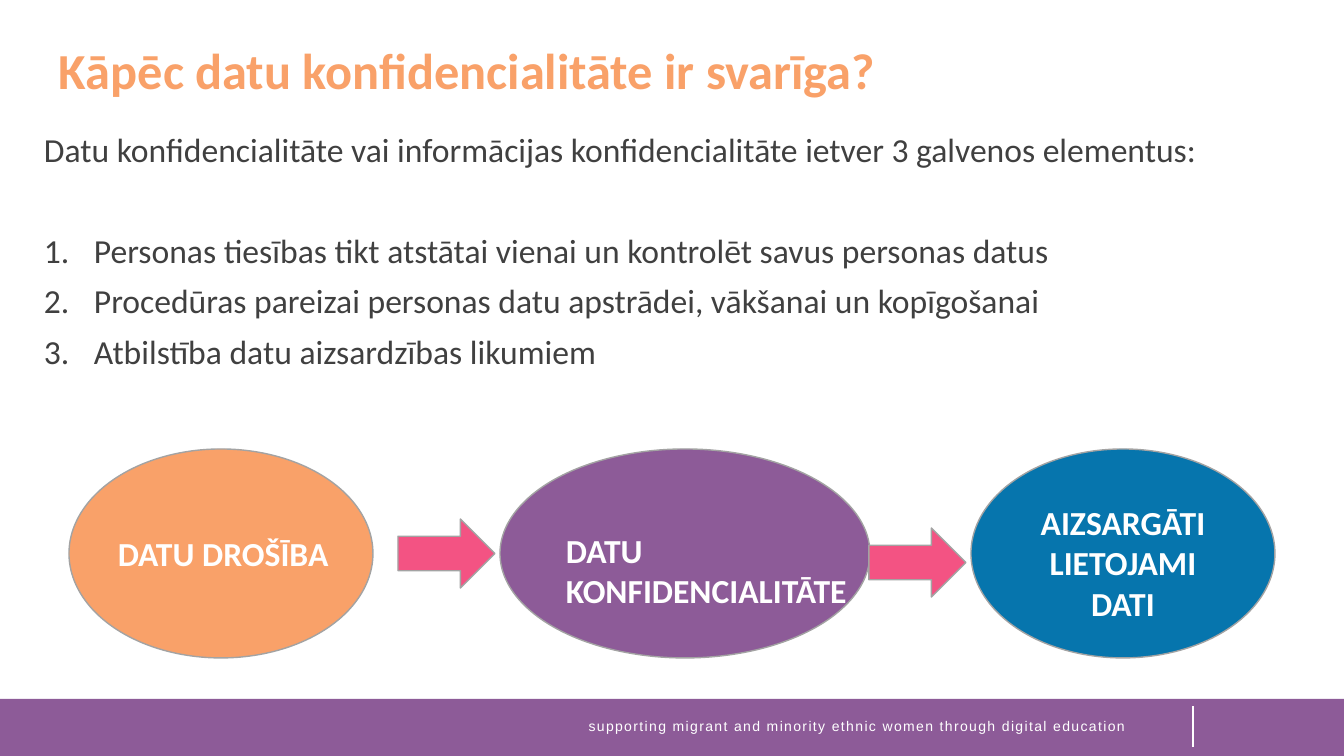
from lxml import etree
from pptx import Presentation
from pptx import util as u
from pptx.dml.color import RGBColor
from pptx.enum import shapes, text
from pptx.oxml.ns import qn

EMU_PER_PX = 914400 / 100.8
ORANGE, PURPLE, BLUE, PINK = "F9A169", "8D5B98", "0675AD", "F35383"
WHITE, DARK, OUTLINE = "FFFFFF", "404040", "A3A3A3"
LEFT, CENTER = text.PP_ALIGN.LEFT, text.PP_ALIGN.CENTER
OVAL, ARROW = shapes.MSO_SHAPE.OVAL, shapes.MSO_SHAPE.RIGHT_ARROW

INTRO = "Datu konfidencialitāte vai informācijas konfidencialitāte ietver 3 galvenos elementus:"
ELEMENTS = [
    "Personas tiesības tikt atstātai vienai un kontrolēt savus personas datus",
    "Procedūras pareizai personas datu apstrādei, vākšanai un kopīgošanai",
    "Atbilstība datu aizsardzības likumiem",
]
STAGES = [  # oval left, oval width, colour, label, label box, alignment
    (69, 304, ORANGE, "DATU DROŠĪBA", (108, 528, 254, 50), LEFT),
    (500, 370, PURPLE, "DATU KONFIDENCIALITĀTE", (556, 525, 323, 92), LEFT),
    (971, 304, BLUE, "AIZSARGĀTI LIETOJAMI DATI", (1007, 497, 232, 92), CENTER),
]
ARROWS = [(398, 519), (869, 528)]


def px(length):
    return u.Emu(round(length * EMU_PER_PX))


def rgb(color):
    return RGBColor.from_string(color)


def add_block(slide, kind, box, fill, outline=None):
    block = slide.shapes.add_shape(kind, *map(px, box))
    block.shadow.inherit = False
    block.fill.solid()
    block.fill.fore_color.rgb = rgb(fill)
    if outline:
        block.line.color.rgb = rgb(outline)
        block.line.width = u.Pt(1)
    else:
        block.line.fill.background()


def add_text(slide, box, lines, size, color, bold=False, font="Calibri", align=LEFT):
    frame = slide.shapes.add_textbox(*map(px, box)).text_frame
    frame.word_wrap = True
    frame.text = "\n".join(lines)
    for paragraph in frame.paragraphs:
        paragraph.alignment = align
        for run in paragraph.runs:
            run.font.name = font
            run.font.size = u.Pt(size)
            run.font.bold = bold
            run.font.color.rgb = rgb(color)
    return frame.paragraphs


def number_items(items, indent):
    for item in items:
        properties = item._p.get_or_add_pPr()
        properties.set("marL", str(px(indent)))
        properties.set("indent", str(-px(indent)))
        etree.SubElement(properties, qn("a:buFont"), typeface="+mj-lt")
        etree.SubElement(properties, qn("a:buAutoNum"), type="arabicPeriod")


def add_footer(slide):
    add_block(slide, shapes.MSO_SHAPE.RECTANGLE, (0, 699, 1344, 57), PURPLE)
    divider = slide.shapes.add_connector(
        shapes.MSO_CONNECTOR.STRAIGHT, *map(px, (1193, 747, 1193, 706)))
    divider.line.color.rgb = rgb(WHITE)
    divider.line.width = u.Pt(1)
    etree.SubElement(divider._element.spPr, qn("a:effectLst"))
    motto, = add_text(
        slide, (564, 713, 586, 27),
        ["supporting migrant and minority ethnic women through digital education"],
        10, WHITE, font="Arial", align=CENTER)
    motto.runs[0]._r.get_or_add_rPr().set("spc", "100")


def add_body(slide):
    intro, *items = add_text(slide, (34, 129, 1224, 309), [INTRO, *ELEMENTS], 24, DARK)
    number_items(items, 50)
    intro.line_spacing = 0.9
    for item in items:
        item.line_spacing = 0.9
        item.space_before = u.Pt(10)
    items[0].space_before = u.Pt(46)


def add_flow(slide):
    for left, width, color, *_ in STAGES:
        add_block(slide, OVAL, (left, 449, width, 209), color, OUTLINE)
    for left, top in ARROWS:
        add_block(slide, ARROW, (left, top, 97, 69), PINK, OUTLINE)
    for *_, label, box, align in STAGES:
        add_text(slide, box, [label], 24, WHITE, bold=True, align=align)


def main():
    deck = Presentation()
    deck.slide_width, deck.slide_height = px(1344), px(756)
    slide = deck.slides.add_slide(deck.slide_layouts[6])
    add_footer(slide)
    add_body(slide)
    title, = add_text(slide, (49, 41, 1224, 68),
                      ["Kāpēc datu konfidencialitāte ir svarīga?"], 36, ORANGE, bold=True)
    title.line_spacing = 0.9
    add_flow(slide)
    deck.save("out.pptx")


if __name__ == "__main__":
    main()
